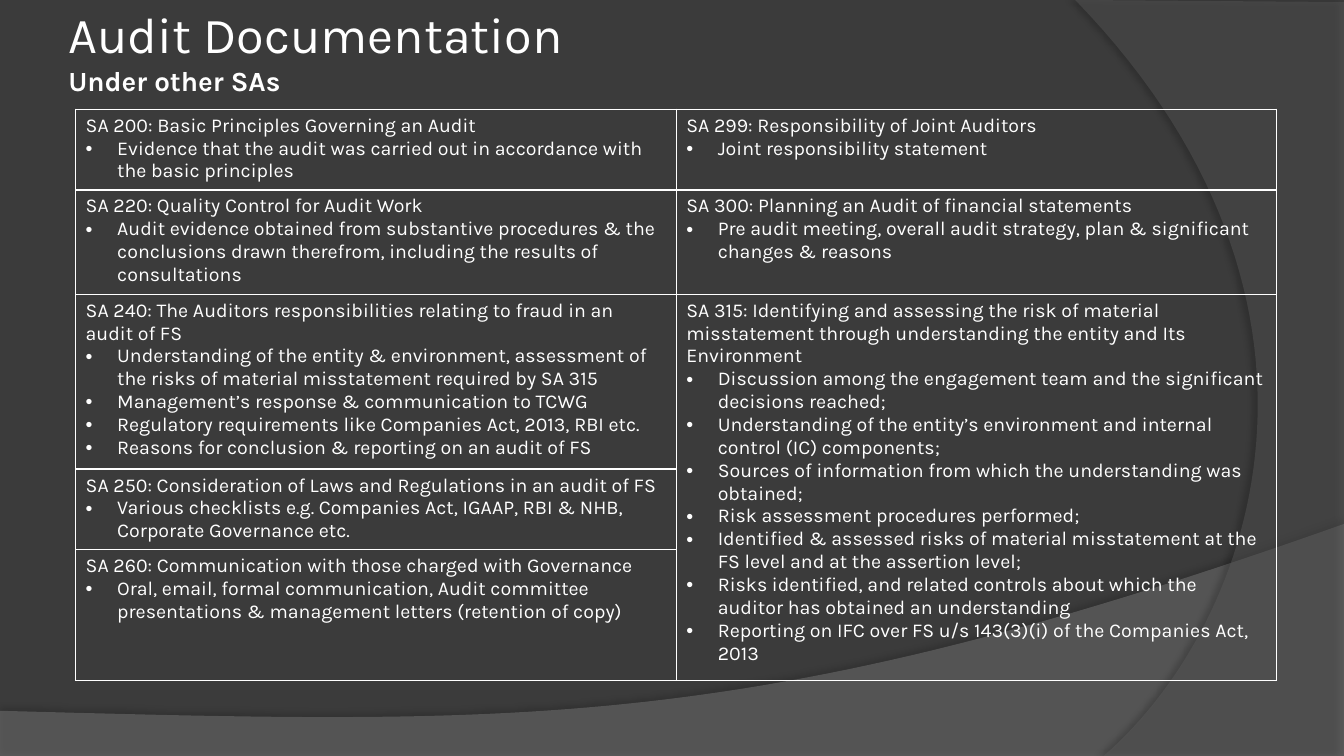
import pptx
import pptx.dml.color
import pptx.enum.text
import pptx.oxml
import pptx.oxml.ns
import pptx.util

EMU_PER_PX = 9525  # 96 px to the inch
FONT = "Karla"
COLORS = {"bg": "3B3B3B", "wave": "7F7F7F", "arc": "5E5E5E",
          "text": "FFFFFF", "shadow": "000000"}
INDENT = 30
COL_WIDTHS = [572, 572]
ROW_HEIGHTS = [75, 96, 162, 75, 121]

# One list per column; each entry is a heading followed by its bullets.
LEFT = [
    ["SA 200: Basic Principles Governing an Audit",
     "Evidence that the audit was carried out in accordance with the basic principles"],
    ["SA 220: Quality Control for Audit Work",
     "Audit evidence obtained from substantive procedures & the conclusions drawn "
     "therefrom, including the results of consultations"],
    ["SA 240: The Auditors responsibilities relating to fraud in an audit of FS",
     "Understanding of the entity & environment, assessment of the risks of material "
     "misstatement required by SA 315",
     "Management’s response & communication to TCWG",
     "Regulatory requirements like Companies Act, 2013, RBI etc.",
     "Reasons for conclusion & reporting on an audit of FS"],
    ["SA 250: Consideration of Laws and Regulations in an audit of FS",
     "Various checklists e.g. Companies Act, IGAAP, RBI & NHB, Corporate Governance etc."],
    ["SA 260: Communication with those charged with Governance",
     "Oral, email, formal communication, Audit committee presentations & management "
     "letters (retention of copy)"],
]
RIGHT = [
    ["SA 299: Responsibility of Joint Auditors",
     "Joint responsibility statement"],
    ["SA 300: Planning an Audit of financial statements",
     "Pre audit meeting, overall audit strategy, plan & significant changes & reasons"],
    ["SA 315: Identifying and assessing the risk of material misstatement through "
     "understanding the entity and Its Environment",
     "Discussion among the engagement team and the significant decisions reached;",
     "Understanding of the entity’s environment and internal control (IC) components;",
     "Sources of information from which the understanding was obtained;",
     "Risk assessment procedures performed;",
     "Identified & assessed risks of material misstatement at the FS level and at the "
     "assertion level;",
     "Risks identified, and related controls about which the auditor has obtained an "
     "understanding",
     "Reporting on IFC over FS u/s 143(3)(i) of the Companies Act, 2013"],
]


def px(n):
    return pptx.util.Emu(round(n * EMU_PER_PX))


def rgb(name):
    return pptx.dml.color.RGBColor.from_string(COLORS[name])


def xml(text):
    ns = pptx.oxml.ns.nsdecls("a")
    return pptx.oxml.parse_xml(text.replace(">", f" {ns}>", 1))


def bezier(p0, p1, p2, p3, steps=60):
    """Points along a cubic curve, without its start."""
    points = []
    for i in range(1, steps + 1):
        t = i / steps
        weights = ((1 - t) ** 3, 3 * t * (1 - t) ** 2, 3 * t * t * (1 - t), t ** 3)
        points.append(tuple(sum(w * p[k] for w, p in zip(weights, (p0, p1, p2, p3)))
                            for k in (0, 1)))
    return points


def add_band(s, points, color, alpha, shadow_alpha, shadow_dist, shadow_angle):
    """Translucent background outline with a soft shadow; alphas in percent."""
    start, *rest = [(px(x), px(y)) for x, y in points]
    builder = s.shapes.build_freeform(*start)
    builder.add_line_segments(rest, close=True)
    sp = builder.convert_to_shape()
    sp.shadow.inherit = False
    sp.line.fill.background()
    sp.fill.solid()
    sp.fill.fore_color.rgb = rgb(color)
    sp_pr = sp._element.spPr
    clr = sp_pr.find(".//" + pptx.oxml.ns.qn("a:srgbClr"))
    clr.append(xml(f'<a:alpha val="{alpha * 1000}"></a:alpha>'))
    sp_pr.find(pptx.oxml.ns.qn("a:effectLst")).append(xml(
        f'<a:outerShdw blurRad="{pptx.util.Pt(4)}" dist="{pptx.util.Pt(shadow_dist)}" '
        f'dir="{shadow_angle * 60000}" algn="ctr" rotWithShape="0">'
        f'<a:srgbClr val="{COLORS["shadow"]}"><a:alpha val="{shadow_alpha * 1000}"/>'
        '</a:srgbClr></a:outerShdw>'))


def add_run(p, text, size, bold=False):
    r = p.add_run()
    r.text = text
    r.font.name = FONT
    r.font.size = pptx.util.Pt(size)
    r.font.bold = bold
    r.font.color.rgb = rgb("text")


def add_title(s, title, subtitle):
    sp = s.shapes.add_textbox(px(60), px(0), px(1045), px(96))
    tf = sp.text_frame
    tf.word_wrap = True
    tf.vertical_anchor = pptx.enum.text.MSO_ANCHOR.MIDDLE
    tf.margin_left = tf.margin_right = tf.margin_top = tf.margin_bottom = px(5)
    p = tf.paragraphs[0]
    add_run(p, title, 36)
    p.add_line_break()
    add_run(p, subtitle, 19.8, bold=True)


def make_bullet(p):
    p_pr = p._p.get_or_add_pPr()
    p_pr.set("marL", str(px(INDENT)))
    p_pr.set("indent", str(-px(INDENT)))
    p_pr.append(xml('<a:buFont typeface="Arial"></a:buFont>'))
    p_pr.append(xml('<a:buChar char="•"></a:buChar>'))


def style_cell(cell):
    """Clear the fill and draw all four borders."""
    cell.fill.background()
    tc_pr = cell._tc.get_or_add_tcPr()
    for i, side in enumerate("LRTB"):
        tc_pr.insert(i, xml(
            f'<a:ln{side} w="{pptx.util.Pt(1)}"><a:solidFill>'
            f'<a:srgbClr val="{COLORS["text"]}"/></a:solidFill></a:ln{side}>'))


def fill_cell(cell, heading, bullets):
    tf = cell.text_frame
    add_run(tf.paragraphs[0], heading, 14)
    for bullet in bullets:
        p = tf.add_paragraph()
        make_bullet(p)
        add_run(p, bullet, 14)


def add_standards_table(s):
    frame = s.shapes.add_table(len(ROW_HEIGHTS), len(COL_WIDTHS), px(72), px(104),
                               px(sum(COL_WIDTHS)), px(sum(ROW_HEIGHTS)))
    table = frame.table
    table.first_row = table.horz_banding = False
    for column, width in zip(table.columns, COL_WIDTHS):
        column.width = px(width)
    for row, height in zip(table.rows, ROW_HEIGHTS):
        row.height = px(height)
    for cell in table.iter_cells():
        style_cell(cell)
    table.cell(2, 1).merge(table.cell(4, 1))
    for col, standards in enumerate((LEFT, RIGHT)):
        for row, (heading, *bullets) in enumerate(standards):
            fill_cell(table.cell(row, col), heading, bullets)


def main():
    prs = pptx.Presentation()
    prs.slide_width, prs.slide_height = px(1280), px(720)
    s = prs.slides.add_slide(prs.slide_layouts[6])
    s.background.fill.solid()
    s.background.fill.fore_color.rgb = rgb("bg")

    wave = [(0, 677), (0, 721), (1280, 721), (1280, 499)]
    wave += bezier((1280, 499), (715, 700), (500, 690), (0, 677))
    add_band(s, wave, "wave", 45, 35, 3.5, 270)
    arc = [(1280, 2), (1280, 720), (1051, 720)]
    arc += bezier((1051, 720), (1196, 594), (1303, 288), (1024, 0))
    add_band(s, arc, "arc", 40, 45, 4, 180)

    add_title(s, "Audit Documentation", "Under other SAs")
    add_standards_table(s)
    prs.save("out.pptx")


if __name__ == "__main__":
    main()
